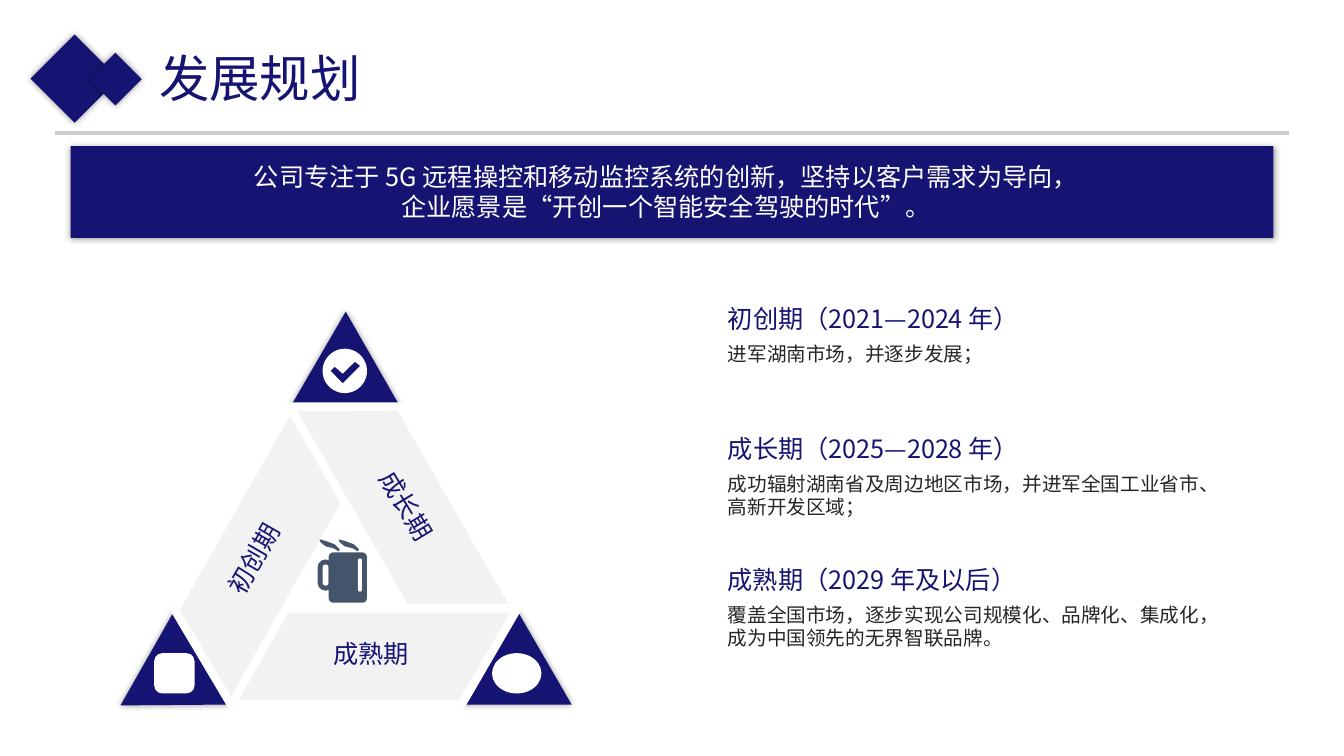
from lxml import etree
from pptx import Presentation
from pptx.dml.color import RGBColor
from pptx.enum.shapes import MSO_CONNECTOR, MSO_SHAPE
from pptx.enum.text import MSO_ANCHOR, PP_ALIGN
from pptx.oxml.ns import qn
from pptx.util import Emu, Pt

PX = 9144
NAVY = RGBColor(0x15, 0x14, 0x72)
PALE = RGBColor(0xF2, 0xF2, 0xF2)
WHITE = RGBColor(0xFF, 0xFF, 0xFF)
SLATE = RGBColor(0x44, 0x54, 0x6A)
DARK = RGBColor(0x26, 0x26, 0x26)
RULE = RGBColor(0xD0, 0xCE, 0xCE)

RECT = MSO_SHAPE.RECTANGLE
ROUND = MSO_SHAPE.ROUNDED_RECTANGLE
OVAL = MSO_SHAPE.OVAL
PEAK = MSO_SHAPE.ISOSCELES_TRIANGLE
SLANT = MSO_SHAPE.PARALLELOGRAM
STRAIGHT = MSO_CONNECTOR.STRAIGHT
LEFT, CENTER, JUSTIFY = PP_ALIGN.LEFT, PP_ALIGN.CENTER, PP_ALIGN.JUSTIFY
TOP, MIDDLE = MSO_ANCHOR.TOP, MSO_ANCHOR.MIDDLE

SANS = "Noto Sans CJK SC"
TITLE = {"size": Pt(36), "name": "Noto Sans CJK JP"}
HEAD = {"size": Pt(18), "name": SANS}
BODY = {"size": Pt(14), "name": SANS}

STAGES = [
    (296, 355, "初创期（2021—2024 年）", "进军湖南市场，并逐步发展；"),
    (425, 431, "成长期（2025—2028 年）",
     "成功辐射湖南省及周边地区市场，并进军全国工业省市、高新开发区域；"),
    (555, 394, "成熟期（2029 年及以后）",
     "覆盖全国市场，逐步实现公司规模化、品牌化、集成化，成为中国领先的无界智联品牌。"),
]
SIDES = [
    ((457, 604), (227, 604, 286), 0, 0.58),
    ((133, 628), (115, 503, 288), 119.6, 0.57),
    ((274, 333), (257, 456, 285), 240.2, 0.57),
]
LABELS = [
    (140, 533, 299.9, "初创期"),
    (287, 480, 58.8, "成长期"),
    (254, 628, 0, "成熟期"),
]
TICK = [(328, 368), (332, 364), (340, 371), (352, 359), (357, 363), (340, 380)]
STEAM = [(317, 535), (324, 537), (332, 540), (337, 545),
         (336, 547), (331, 544), (323, 542), (318, 538)]


def scale(*values):
    return [Emu(value * PX) for value in values]


def paint(shape, color):
    shape.shadow.inherit = False
    shape.fill.solid()
    shape.fill.fore_color.rgb = color
    shape.line.fill.background()
    return shape


def add_form(slide, kind, box, color, turn=0, adjust=None):
    shape = paint(slide.shapes.add_shape(kind, *scale(*box)), color)
    shape.rotation = turn
    if adjust is not None:
        shape.adjustments[0] = adjust
    return shape


def add_glow(shape):
    effects = shape.element.spPr.find(qn("a:effectLst"))
    outer = etree.SubElement(effects, qn("a:outerShdw"), blurRad=str(Pt(5)),
                             dist="0", dir="0", algn="ctr", rotWithShape="0")
    tint = etree.SubElement(outer, qn("a:srgbClr"), val="000000")
    etree.SubElement(tint, qn("a:alpha"), val="40000")


def add_free(slide, points, color):
    build = slide.shapes.build_freeform(*points[0], scale=PX)
    build.add_line_segments(points[1:], close=True)
    paint(build.convert_to_shape(), color)


def add_text(slide, box, lines, style, color, align=LEFT, turn=0, anchor=TOP):
    frame_box = slide.shapes.add_textbox(*scale(*box))
    frame_box.rotation = turn
    frame = frame_box.text_frame
    frame.word_wrap = True
    frame.vertical_anchor = anchor
    for index, line in enumerate(lines):
        para = frame.add_paragraph() if index else frame.paragraphs[0]
        para.alignment = align
        run = para.add_run()
        run.text = line
        run.font.color.rgb = color
        for key, value in style.items():
            setattr(run.font, key, value)
        etree.SubElement(run.font._element, qn("a:ea"), typeface=style["name"])


def add_rule(slide, start, end):
    line = slide.shapes.add_connector(STRAIGHT, *scale(*start, *end))
    line.line.color.rgb = RULE
    line.line.width = Pt(2.25)
    etree.SubElement(line.element.spPr, qn("a:effectLst"))


def add_header(slide):
    add_glow(add_form(slide, RECT, (70, 145, 1193, 91), NAVY))
    add_rule(slide, (55, 132), (1278, 132))
    for left, top, size in ((43, 47, 62), (96, 60, 37)):
        add_glow(add_form(slide, RECT, (left, top, size, size), NAVY, 315))
    add_text(slide, (148, 41, 621, 71), ["发展规划"], TITLE, NAVY, anchor=MIDDLE)
    add_text(slide, (105, 155, 1111, 74),
             ["公司专注于 5G 远程操控和移动监控系统的创新，坚持以客户需求为导向，",
              "企业愿景是“开创一个智能安全驾驶的时代”。"],
             HEAD, WHITE, CENTER)


def add_ring(slide):
    for corner, (left, top, width), turn, adjust in SIDES:
        add_glow(add_form(slide, PEAK, (*corner, 110, 95), NAVY, turn))
        side = add_form(slide, SLANT, (left, top, width, 95), PALE, turn, adjust)
        side.line.color.rgb = WHITE
        side.line.width = Pt(6)
    for left, top, turn, name in LABELS:
        add_text(slide, (left, top, 228, 46), [name], HEAD, NAVY, CENTER, turn)


def add_icons(slide):
    add_form(slide, OVAL, (488, 648, 49, 40), WHITE)
    add_form(slide, ROUND, (153, 648, 40, 40), WHITE, adjust=0.2)
    add_form(slide, OVAL, (320, 346, 44, 44), WHITE)
    add_free(slide, TICK, NAVY)


def add_mug(slide):
    parts = [
        ((315, 555, 16, 31), SLATE, 0.5),
        ((320, 560, 6, 21), WHITE, 0.5),
        ((326, 548, 38, 50), SLATE, 0.12),
        ((355, 554, 4, 33), WHITE, 0.5),
    ]
    for box, color, adjust in parts:
        add_form(slide, ROUND, box, color, adjust=adjust)
    for shift in (0, 19):
        add_free(slide, [(x + shift, y) for x, y in STEAM], SLATE)


def add_stages(slide):
    for top, width, head, body in STAGES:
        add_text(slide, (712, top + 38, 492, 66), [body], BODY, DARK)
        add_text(slide, (712, top, width, 46), [head], HEAD, NAVY, JUSTIFY)


def main():
    deck = Presentation()
    deck.slide_width, deck.slide_height = scale(1333, 750)
    slide = deck.slides.add_slide(deck.slide_layouts[6])
    add_header(slide)
    add_ring(slide)
    add_icons(slide)
    add_mug(slide)
    add_stages(slide)
    deck.save("out.pptx")


if __name__ == "__main__":
    main()
